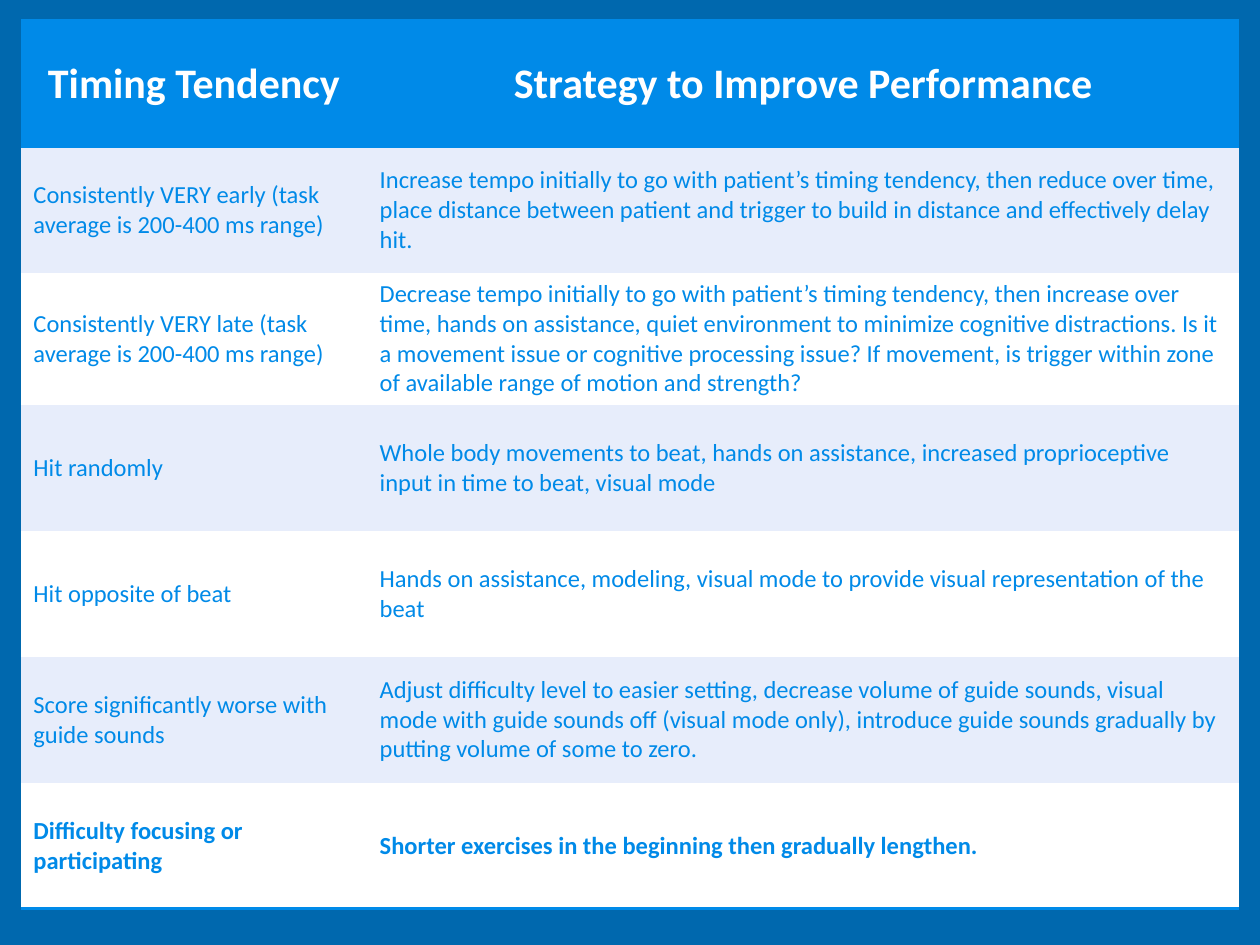
from lxml.etree import SubElement
from pptx import Presentation
from pptx.dml.color import RGBColor
from pptx.enum.text import MSO_ANCHOR as ANCHOR, PP_ALIGN as ALIGN
from pptx.oxml.ns import qn
from pptx.util import Cm, Pt

NAVY = RGBColor(0x00, 0x68, 0xAE)
BLUE = RGBColor(0x00, 0x8A, 0xE8)
PALE = RGBColor(0xE7, 0xED, 0xFB)
WHITE = RGBColor(0xFF, 0xFF, 0xFF)

PLAIN_STYLE = "{2D5ABB26-0587-4C30-8999-92F81FD0307C}"
COL_WIDTHS = (Cm(6.98), Cm(17.58))
ROW_HEIGHT = Cm(2.54)

HEADER_FONT = {"name": "Calibri", "size": Pt(24), "bold": True}
BODY_FONT = {"name": "Calibri", "size": Pt(14), "bold": False}
LAST_FONT = {**BODY_FONT, "bold": True}

ROWS = [
    ("Timing Tendency", "Strategy to Improve Performance"),
    ("Consistently VERY early (task average is 200-400 ms range)",
     "Increase tempo initially to go with patient’s timing tendency, then reduce "
     "over time, place distance between patient and trigger to build in distance "
     "and effectively delay hit."),
    ("Consistently VERY late (task average is 200-400 ms range)",
     "Decrease tempo initially to go with patient’s timing tendency, then increase "
     "over time, hands on assistance, quiet environment to minimize cognitive "
     "distractions. Is it a movement issue or cognitive processing issue? If "
     "movement, is trigger within zone of available range of motion and strength?"),
    ("Hit randomly",
     "Whole body movements to beat, hands on assistance, increased proprioceptive "
     "input in time to beat, visual mode"),
    ("Hit opposite of beat",
     "Hands on assistance, modeling, visual mode to provide visual representation "
     "of the beat"),
    ("Score significantly worse with guide sounds",
     "Adjust difficulty level to easier setting, decrease volume of guide sounds, "
     "visual mode with guide sounds off (visual mode only), introduce guide sounds "
     "gradually by putting volume of some to zero."),
    ("Difficulty focusing or participating",
     "Shorter exercises in the beginning then gradually lengthen."),
]


def add_border(cell, side):
    ln = SubElement(cell._tc.get_or_add_tcPr(), qn(f"a:ln{side}"), w=str(Pt(2)))
    fill = SubElement(ln, qn("a:solidFill"))
    SubElement(fill, qn("a:srgbClr"), val=str(BLUE))


def format_cell(cell, text, font, color, fill, align, borders):
    for side in borders:
        add_border(cell, side)
    cell.fill.solid()
    cell.fill.fore_color.rgb = fill
    cell.vertical_anchor = ANCHOR.MIDDLE
    p = cell.text_frame.paragraphs[0]
    p.alignment = align
    r = p.add_run()
    r.text = text
    for key, value in font.items():
        setattr(r.font, key, value)
    r.font.color.rgb = color


def row_format(i):
    if i == 0:
        return HEADER_FONT, WHITE, BLUE, ALIGN.CENTER, "TB"
    fill = PALE if i % 2 else WHITE
    if i == len(ROWS) - 1:
        return LAST_FONT, BLUE, fill, ALIGN.LEFT, "B"
    return BODY_FONT, BLUE, fill, ALIGN.LEFT, ""


def add_strategy_table(s):
    table = s.shapes.add_table(len(ROWS), len(COL_WIDTHS), Cm(0.42), Cm(0.42),
                               sum(COL_WIDTHS), ROW_HEIGHT * len(ROWS)).table
    table._tbl.tblPr.find(qn("a:tableStyleId")).text = PLAIN_STYLE
    table.horz_banding = False
    for column, width in zip(table.columns, COL_WIDTHS):
        column.width = width
    for i, texts in enumerate(ROWS):
        table.rows[i].height = ROW_HEIGHT
        for j, text in enumerate(texts):
            format_cell(table.cell(i, j), text, *row_format(i))


def main():
    prs = Presentation()
    prs.slide_width, prs.slide_height = Cm(25.4), Cm(19.05)
    s = prs.slides.add_slide(prs.slide_layouts[6])
    s.background.fill.solid()
    s.background.fill.fore_color.rgb = NAVY
    add_strategy_table(s)
    prs.save("out.pptx")


if __name__ == "__main__":
    main()
